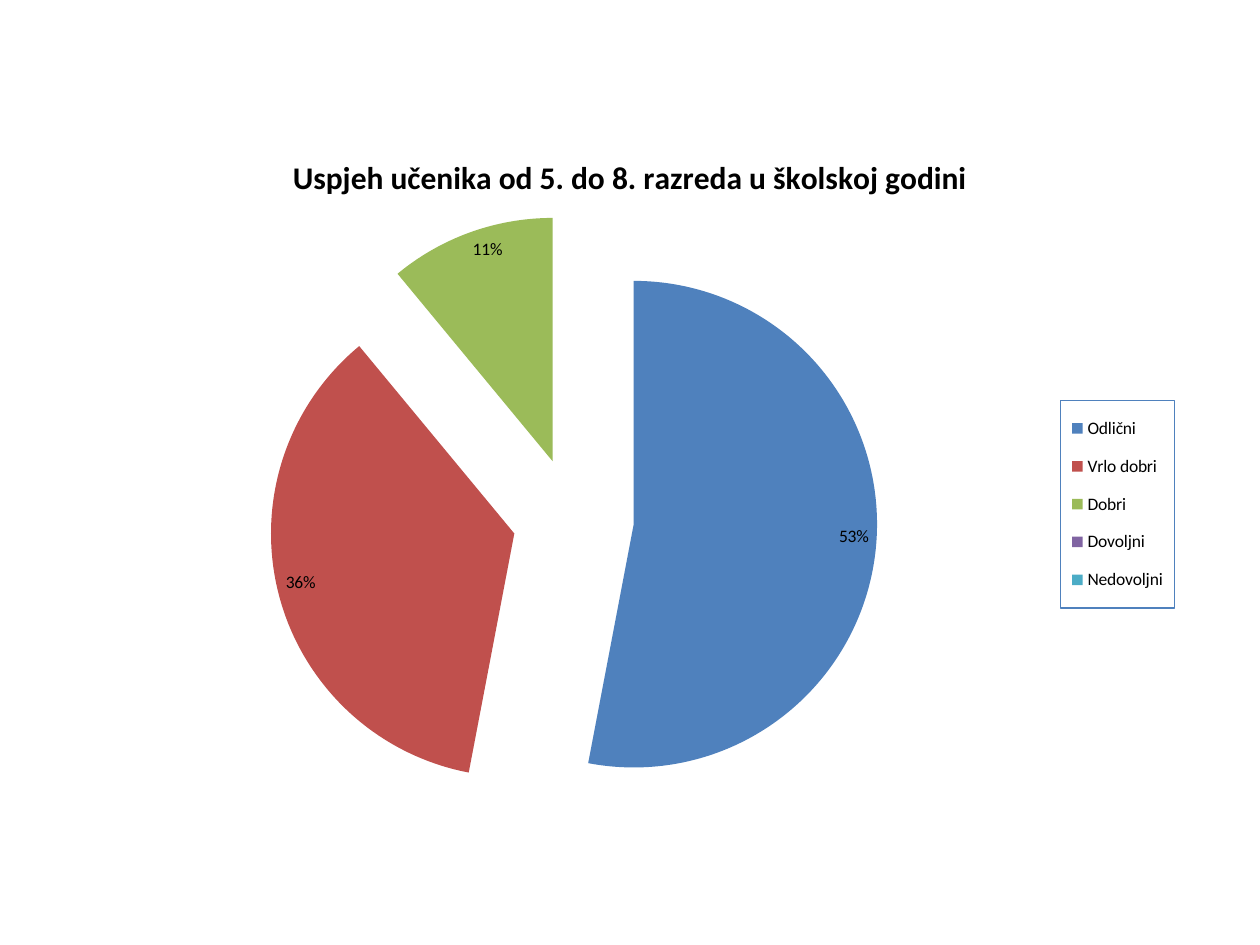
"""Build a slide with an exploded pie chart of pupils' grades."""
from lxml.etree import SubElement
from pptx import Presentation
from pptx.chart.data import CategoryChartData
from pptx.dml.color import RGBColor
from pptx.enum.chart import XL_CHART_TYPE, XL_LABEL_POSITION, XL_LEGEND_POSITION
from pptx.oxml import parse_xml
from pptx.oxml.ns import nsdecls, qn
from pptx.util import Inches, Pt


def paint(color, hue):
    color.rgb = RGBColor.from_string(hue)


def layout(**sides):
    root = parse_xml(f"<c:layout {nsdecls('c')}/>")
    manual = SubElement(root, qn("c:manualLayout"))
    for axis in "xy":
        SubElement(manual, qn(f"c:{axis}Mode")).set("val", "edge")
    for side, share in sides.items():
        SubElement(manual, qn(f"c:{side}")).set("val", str(share))
    return root


grades = [
    ("Odlični", 53, "4F81BD"),
    ("Vrlo dobri", 36, "C0504D"),
    ("Dobri", 11, "9BBB59"),
    ("Dovoljni", 0, "8064A2"),
    ("Nedovoljni", 0, "4BACC6"),
]

deck = Presentation()
deck.slide_width, deck.slide_height = Inches(10), Inches(7.5)
slide = deck.slides.add_slide(deck.slide_layouts[6])

data = CategoryChartData()
data.categories = [name for name, count, hue in grades]
data.add_series("Series 1", [count for name, count, hue in grades])
frame = slide.shapes.add_chart(
    XL_CHART_TYPE.PIE, Inches(0.5), Inches(1.02), Inches(9), Inches(5.68), data
)
chart = frame.chart
chart.font.name = "Calibri"
chart.font.size = Pt(10)
paint(chart.font.color, "000000")

chart.has_title = True
run = chart.chart_title.text_frame.paragraphs[0].add_run()
run.text = "Uspjeh učenika od 5. do 8. razreda u školskoj godini"
run.font.name = "Calibri"
run.font.size = Pt(18)
run.font.bold = True
paint(run.font.color, "000000")
chart.chart_title.include_in_layout = False

plot = chart.plots[0]
plot.vary_by_categories = True
pie = plot.series[0]
burst = parse_xml(f'<c:explosion {nsdecls("c")} val="25"/>')
pie._element.find(qn("c:tx")).addnext(burst)

labels = pie.data_labels
labels.show_value = False
labels.show_percentage = True
labels.number_format = "0%"
labels.number_format_is_linked = False
labels.position = XL_LABEL_POSITION.INSIDE_END

hidden = 0
for index, (name, count, hue) in enumerate(grades):
    fill = pie.points[index].format.fill
    fill.solid()
    paint(fill.fore_color, hue)
    if not count:
        label = parse_xml(
            f'<c:dLbl {nsdecls("c")}><c:idx val="{index}"/><c:delete val="1"/></c:dLbl>'
        )
        labels._element.insert(hidden, label)
        hidden += 1

chart.has_legend = True
legend = chart.legend
legend.position = XL_LEGEND_POSITION.RIGHT
legend.include_in_layout = False
legend.font.name = "Calibri"
legend.font.size = Pt(10)
paint(legend.font.color, "000000")
for old in legend._element.findall(qn("c:layout")):
    legend._element.remove(old)
legend._element.find(qn("c:legendPos")).addnext(layout(x=0.88, y=0.38, w=0.1, h=0.29))
border = parse_xml(
    f'<c:spPr {nsdecls("c", "a")}><a:ln w="9525"><a:solidFill>'
    '<a:srgbClr val="4F81BD"/></a:solidFill></a:ln></c:spPr>'
)
legend._element.find(qn("c:txPr")).addprevious(border)

area = plot._element.getparent()
for old in area.findall(qn("c:layout")):
    area.remove(old)
area.insert(0, layout(x=0.18, y=0.12, w=0.54, h=0.85))

deck.save("out.pptx")
